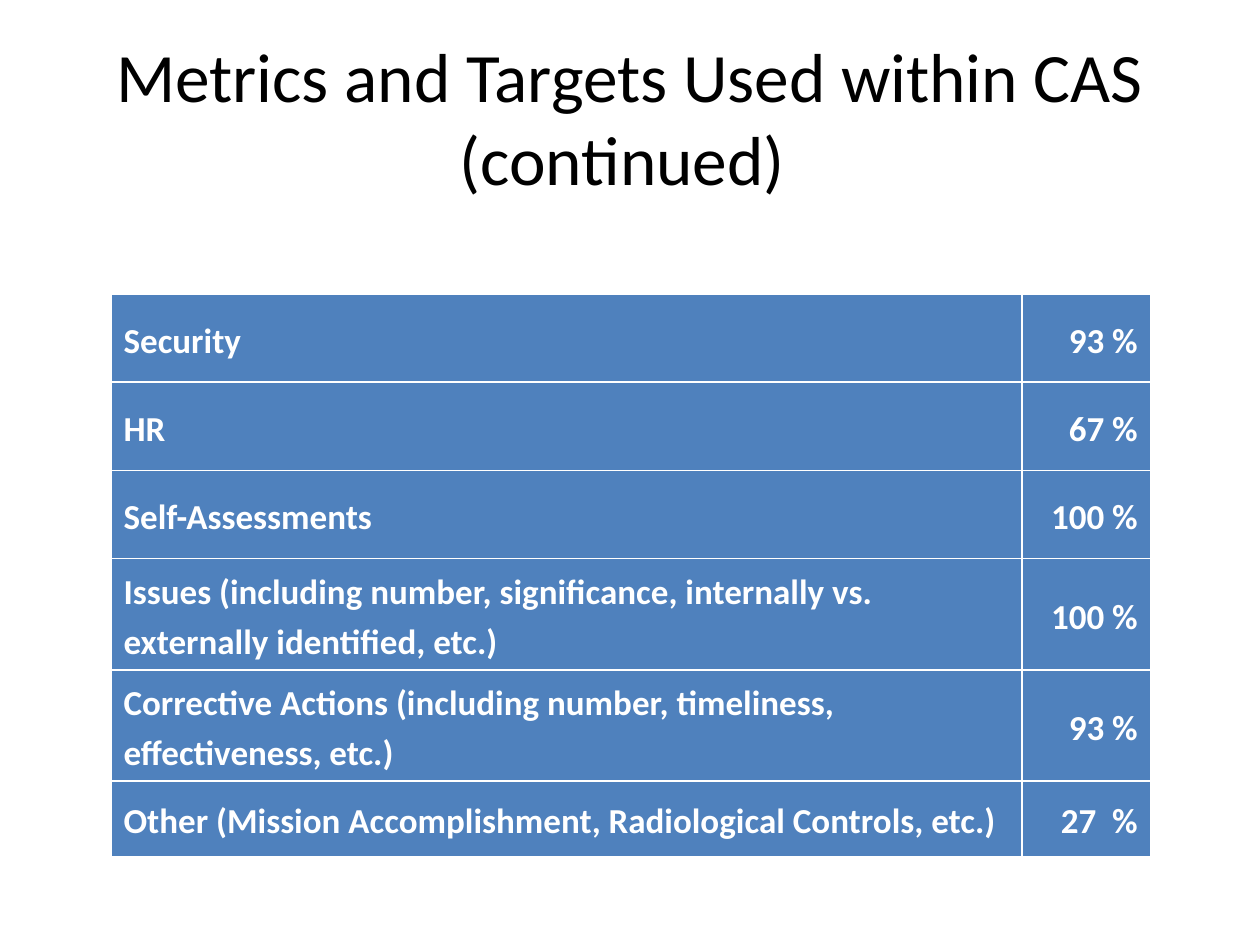
"""Build the slide of metrics and targets used within CAS."""
from pptx import Presentation
from pptx.dml.color import RGBColor
from pptx.enum.text import MSO_ANCHOR, MSO_AUTO_SIZE, PP_ALIGN
from pptx.util import Pt

COLORS = {"title": "000000", "cell": "4F81BD", "text": "FFFFFF"}
TITLE_FONT = {"name": "Calibri", "size": Pt(39.6), "bold": False}
CELL_FONT = {"name": "Calibri", "size": Pt(20), "bold": True}
CELL_FORMAT = {
    "vertical_anchor": MSO_ANCHOR.MIDDLE,
    "margin_left": Pt(7.2),
    "margin_right": Pt(7.2),
    "margin_top": Pt(3.6),
    "margin_bottom": Pt(3.6),
}
TITLE_PLACE = {"left": Pt(36), "top": Pt(21.6), "width": Pt(648), "height": Pt(90)}
COLUMN_WIDTHS = [520.5, 73.5]
COLUMN_ALIGNMENTS = [PP_ALIGN.LEFT, PP_ALIGN.RIGHT]
METRICS = [
    ("Security", "93 %", 50.4),
    ("HR", "67 %", 50.4),
    ("Self-Assessments", "100 %", 50.4),
    ("Issues (including number, significance, internally vs. externally identified, etc.)", "100 %", 43.2),
    ("Corrective Actions (including number, timeliness, effectiveness, etc.)", "93 %", 43.2),
    ("Other (Mission Accomplishment, Radiological Controls, etc.)", "27  %", 43.2),
]


def apply(target, values):
    for attribute, value in values.items():
        setattr(target, attribute, value)


def style_font(font, values, color):
    apply(font, values)
    font.color.rgb = RGBColor.from_string(COLORS[color])


presentation = Presentation()
presentation.slide_width = Pt(720)
presentation.slide_height = Pt(540)
slide = presentation.slides.add_slide(presentation.slide_layouts[5])

heading = slide.shapes.title
apply(heading, TITLE_PLACE)
heading.text_frame.text = "Metrics and Targets Used within CAS\v(continued) "
heading.text_frame.auto_size = MSO_AUTO_SIZE.NONE
heading.text_frame.vertical_anchor = MSO_ANCHOR.MIDDLE
heading_line = heading.text_frame.paragraphs[0]
heading_line.alignment = PP_ALIGN.CENTER
for run in heading_line.runs:
    style_font(run.font, TITLE_FONT, "title")

metrics = slide.shapes.add_table(
    len(METRICS), len(COLUMN_WIDTHS), Pt(63.4), Pt(168),
    Pt(sum(COLUMN_WIDTHS)), Pt(sum(height for *_, height in METRICS)),
).table
metrics.horz_banding = False
for column, width in zip(metrics.columns, COLUMN_WIDTHS):
    column.width = Pt(width)

for row, (*entries, height) in zip(metrics.rows, METRICS):
    row.height = Pt(height)
    for cell, entry, alignment in zip(row.cells, entries, COLUMN_ALIGNMENTS):
        apply(cell, CELL_FORMAT)
        cell.fill.solid()
        cell.fill.fore_color.rgb = RGBColor.from_string(COLORS["cell"])
        cell.text = entry
        paragraph = cell.text_frame.paragraphs[0]
        apply(paragraph, {"alignment": alignment, "line_spacing": 1.15})
        style_font(paragraph.runs[0].font, CELL_FONT, "text")

presentation.save("out.pptx")
